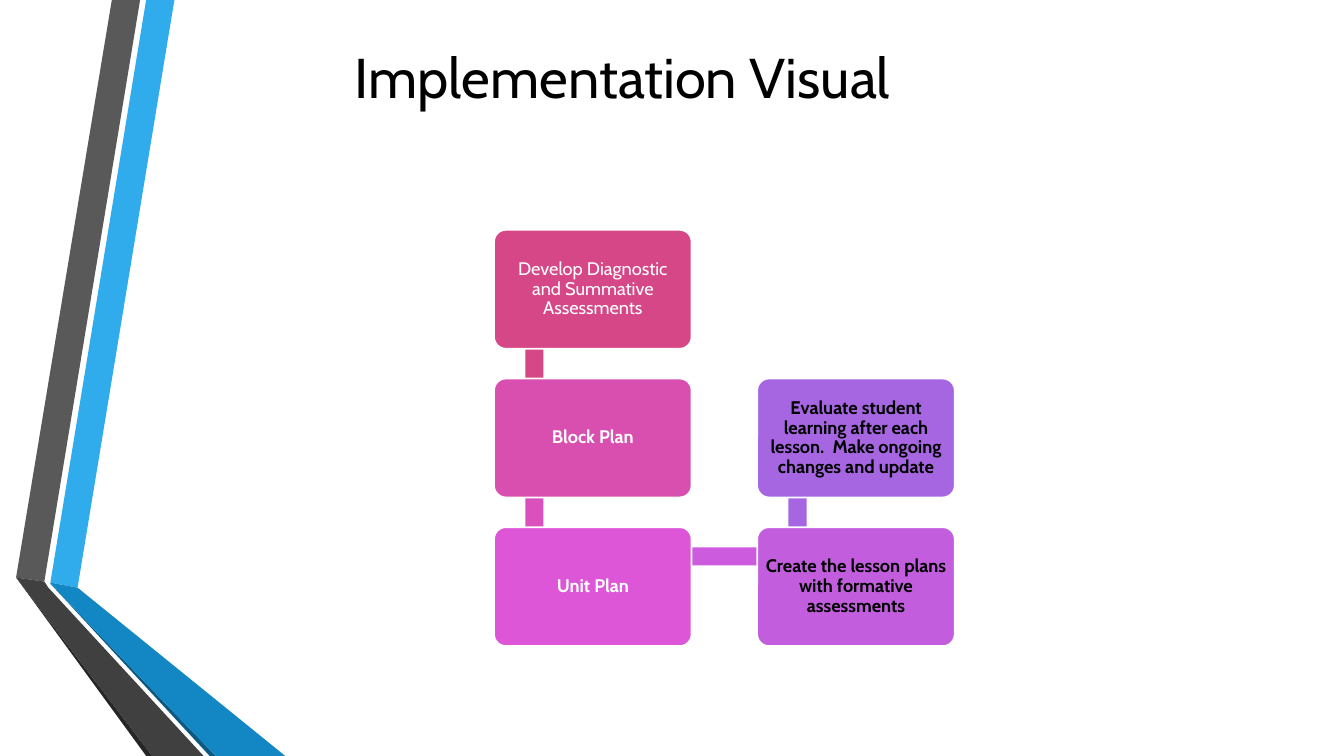
from pptx import Presentation
from pptx.dml.color import RGBColor
from pptx.enum import shapes, text
from pptx.util import Inches, Pt

THEME = {
    "font": "Cabin", "title_size": 40, "step_size": 13,
    "dark": "000000", "light": "FFFFFF",
}

TITLE = "Implementation Visual"

# Steps in flow order: text, column, row, fill, text colour, bold
STEPS = [
    ("Develop Diagnostic and Summative Assessments", 0, 0, "D64787", "light", False),
    ("Block Plan", 0, 1, "D94FB0", "light", True),
    ("Unit Plan", 0, 2, "DC56D7", "light", True),
    ("Create the lesson plans with formative assessments", 1, 2, "C25EDE", "dark", True),
    ("Evaluate student learning after each lesson.  Make ongoing changes and update",
     1, 1, "A666E1", "dark", True),
]
BAR_FILLS = ["D64787", "DA51BD", "CC5BDE", "A666E1"]

# Ribbon down the left edge: fill and corner points
RIBBON = [
    ("30ACEC", [(0.5, 5.78), (0.77, 5.83), (1.73, 0), (1.45, 0)]),
    ("595959", [(1.39, 0), (1.11, 0), (0.16, 5.73), (0.44, 5.77)]),
    ("262626", [(0.16, 5.73), (1.45, 7.5), (1.51, 7.5)]),
    ("0C5A82", [(0.5, 5.79), (2.08, 7.5), (2.14, 7.5)]),
    ("1287C3", [(0.5, 5.79), (2.14, 7.5), (2.83, 7.5), (0.77, 5.83), (0.5, 5.78)]),
    ("404040", [(2.02, 7.5), (0.48, 5.83), (0.44, 5.77), (0.16, 5.73), (1.51, 7.5)]),
]

# Grid of steps, in inches
GRID_LEFT, GRID_TOP = 4.9, 2.28
COLUMN_STEP, ROW_STEP = 2.61, 1.475
BOX_WIDTH, BOX_HEIGHT = 1.96, 1.18
JOINT_X, JOINT_Y = 0.4, 0.29
BAR_THICKNESS = 0.18


def paint(shape, fill, line=None):
    shape.shadow.inherit = False
    shape.fill.solid()
    shape.fill.fore_color.rgb = RGBColor.from_string(fill)
    if line:
        shape.line.color.rgb = RGBColor.from_string(line)
        shape.line.width = Pt(1.25)
    else:
        shape.line.fill.background()


def write(shape, content, *, size, color, bold=False, inset=0.05,
          line_spacing=1.0, space_after=0):
    frame = shape.text_frame
    frame.word_wrap = True
    frame.vertical_anchor = text.MSO_ANCHOR.MIDDLE
    frame.margin_left = frame.margin_right = Inches(inset)
    frame.margin_top = frame.margin_bottom = Inches(0.05)
    paragraph = frame.paragraphs[0]
    paragraph.alignment = text.PP_ALIGN.CENTER
    paragraph.line_spacing = line_spacing
    paragraph.space_after = Pt(space_after)
    run = paragraph.add_run()
    run.text = content
    run.font.name = THEME["font"]
    run.font.size = Pt(size)
    run.font.bold = bold
    run.font.color.rgb = RGBColor.from_string(color)


def corner(column, row):
    return GRID_LEFT + column * COLUMN_STEP, GRID_TOP + row * ROW_STEP


def add_bar(slide, start, end, fill):
    """Join two steps, trimming half a thickness off the sides of the line."""
    (x1, y1), (x2, y2) = corner(*start), corner(*end)
    left, top = min(x1, x2) + JOINT_X, min(y1, y2) + JOINT_Y
    width, height = abs(x2 - x1), abs(y2 - y1)
    if width:
        top, height = top - BAR_THICKNESS / 2, BAR_THICKNESS
    else:
        left, width = left - BAR_THICKNESS / 2, BAR_THICKNESS
    bar = slide.shapes.add_shape(
        shapes.MSO_SHAPE.RECTANGLE,
        Inches(left), Inches(top), Inches(width), Inches(height))
    paint(bar, fill)


def add_step(slide, content, column, row, fill, color, bold):
    left, top = corner(column, row)
    box = slide.shapes.add_shape(
        shapes.MSO_SHAPE.ROUNDED_RECTANGLE,
        Inches(left), Inches(top), Inches(BOX_WIDTH), Inches(BOX_HEIGHT))
    box.adjustments[0] = 0.1
    paint(box, fill, THEME["light"])
    write(box, content, size=THEME["step_size"], color=THEME[color], bold=bold,
          line_spacing=0.9, space_after=4.5)


def main():
    presentation = Presentation()
    presentation.slide_width = Inches(13.33)
    presentation.slide_height = Inches(7.5)
    slide = presentation.slides.add_slide(presentation.slide_layouts[6])

    # Ribbon
    for fill, points in RIBBON:
        corners = [(Inches(x), Inches(y)) for x, y in points]
        builder = slide.shapes.build_freeform(*corners[0])
        builder.add_line_segments(corners[1:], close=True)
        paint(builder.convert_to_shape(), fill)

    # Title
    title = slide.shapes.add_textbox(
        Inches(1.71), Inches(0.24), Inches(8.93), Inches(1.02))
    write(title, TITLE, size=THEME["title_size"], color=THEME["dark"], inset=0.1)

    # Bars lie behind the steps they join
    for before, after, fill in zip(STEPS, STEPS[1:], BAR_FILLS):
        add_bar(slide, before[1:3], after[1:3], fill)

    # Steps
    for step in STEPS:
        add_step(slide, *step)

    presentation.save("out.pptx")


if __name__ == "__main__":
    main()
